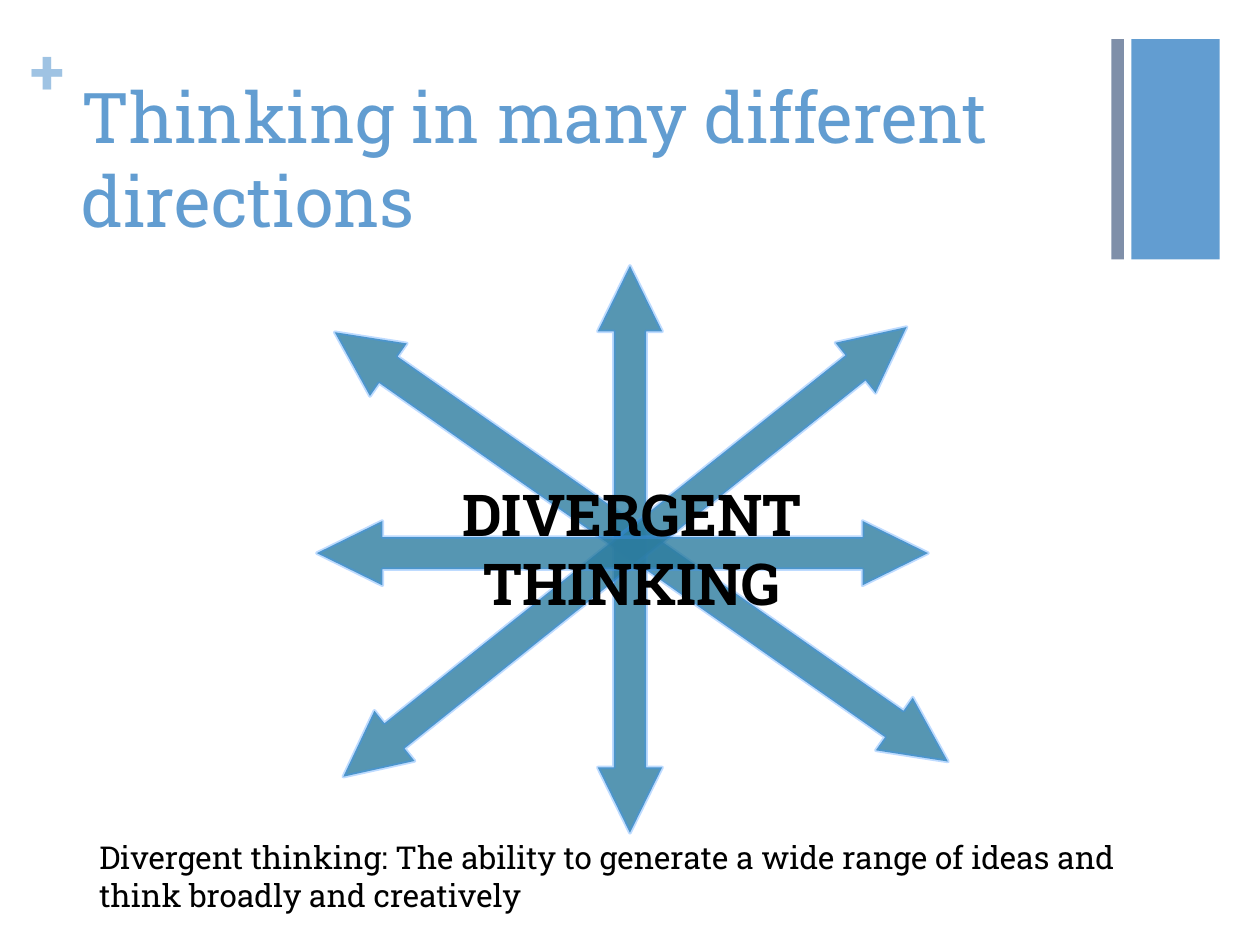
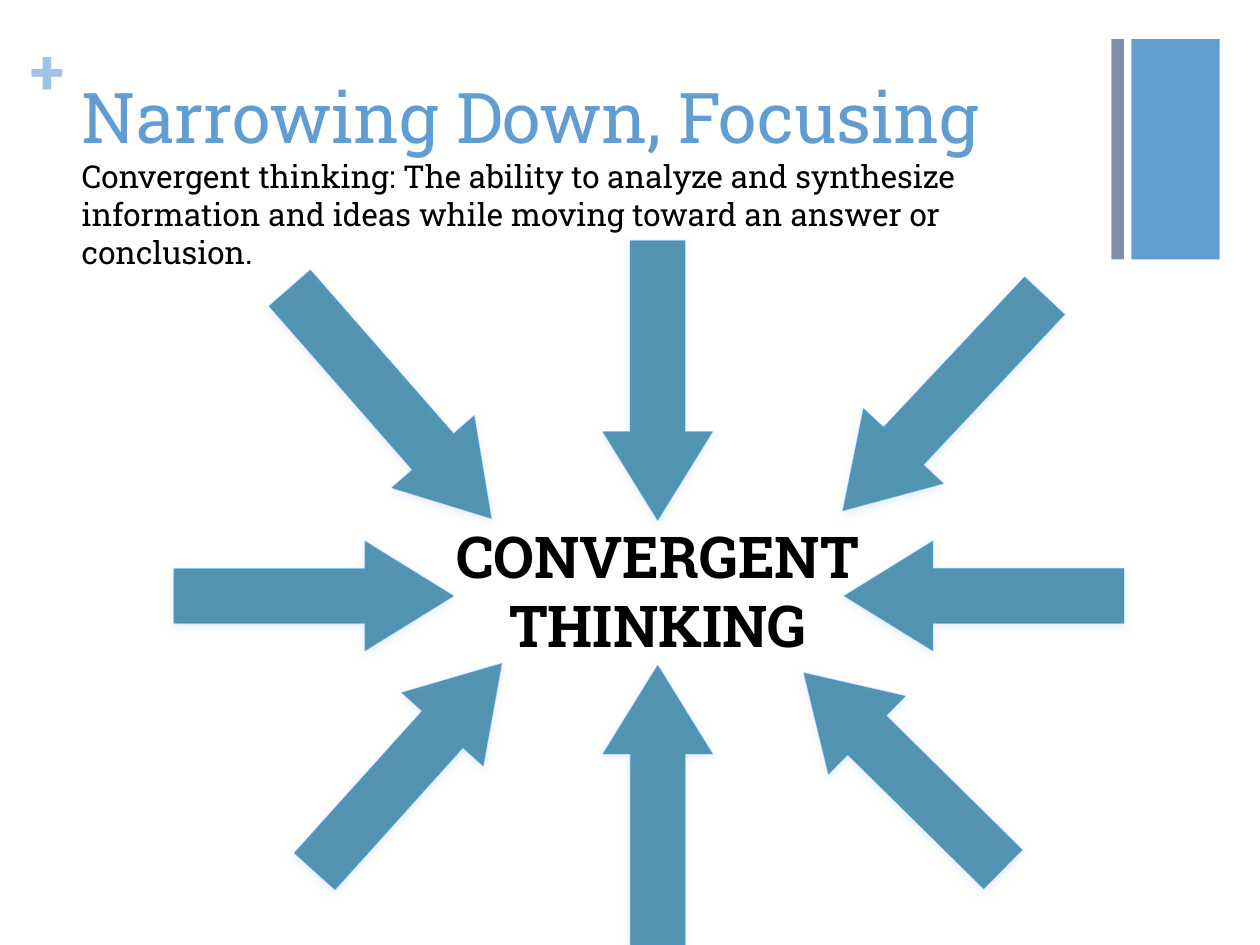
import pptx
import pptx.util
import pptx.dml.color
import pptx.enum.shapes
import pptx.enum.text
import lxml.etree

Inches = pptx.util.Inches
Pt = pptx.util.Pt
Shape = pptx.enum.shapes.MSO_SHAPE
Align = pptx.enum.text.PP_ALIGN
Anchor = pptx.enum.text.MSO_ANCHOR

FONT = "Roboto Slab"
BLUE, SLATE, PALE = "629DD1", "7F8FA9", "9FC3E3"
TEAL, EDGE, GLOW, BLACK = "2C7C9F", "3A93FF", "ACCBF9", "000000"
TITLE_BOX = (0.55, 0.53, 8.26, 1.22)
BAND_BOX = (8.82, 0.31, 0.86, 1.75)

# Each ray: centre offset from the hub (x, y), length, angle
SPREAD = [
    (0.09, -0.02, 5.94, 215),
    (0, 0, 4.5, 270),
    (-0.04, 0.02, 5.72, 141.4),
    (-0.06, 0.03, 4.85, 0),
]
FOCUS = [
    (-2.12, -1.53, 2.43, 228.8),
    (-2.73, 0, 2.22, 180),
    (2.59, 0, 2.22, 0),
    (0, -1.71, 2.22, 270),
    (2.27, -1.53, 2.34, 313.2),
    (-1.98, 1.36, 2.22, 132),
    (0, 1.66, 2.22, 90),
    (1.95, 1.39, 2.22, 44.6),
]


def color(code):
    return pptx.dml.color.RGBColor.from_string(code)


def place(box):
    return [Inches(round(v, 3)) for v in box]


def fade(fill, percent):
    """Make a solid fill partly see-through."""
    tint = fill._xPr.find(".//" + pptx.oxml.ns.qn("a:srgbClr"))
    alpha = lxml.etree.SubElement(tint, pptx.oxml.ns.qn("a:alpha"))
    alpha.set("val", str(percent * 1000))


def glow(shape):
    """Add a soft shadow straight below the shape."""
    qn = pptx.oxml.ns.qn
    effects = shape._element.spPr.find(qn("a:effectLst"))
    outer = lxml.etree.SubElement(effects, qn("a:outerShdw"))
    for key, val in (("blurRad", Pt(5)), ("dist", Pt(1.8)), ("dir", 5400000), ("rotWithShape", 0)):
        outer.set(key, str(int(val)))
    tint = lxml.etree.SubElement(outer, qn("a:srgbClr"), val=GLOW)
    lxml.etree.SubElement(tint, qn("a:alpha"), val="34000")


def add_solid(slide, kind, box, code):
    shape = slide.shapes.add_shape(kind, *place(box))
    shape.shadow.inherit = False
    shape.fill.solid()
    shape.fill.fore_color.rgb = color(code)
    shape.line.fill.background()
    return shape


def write(frame, lines, size, code, bold=False, align=Align.LEFT,
          anchor=Anchor.TOP, inset=(0.1, 0.05)):
    frame.word_wrap = True
    frame.auto_size = pptx.enum.text.MSO_AUTO_SIZE.NONE
    frame.vertical_anchor = anchor
    frame.margin_left = frame.margin_right = Inches(inset[0])
    frame.margin_top = frame.margin_bottom = Inches(inset[1])
    for i, line in enumerate(lines):
        para = frame.paragraphs[0] if i == 0 else frame.add_paragraph()
        para.alignment = align
        run = para.add_run()
        run.text = line
        run.font.name = FONT
        run.font.size = Pt(size)
        run.font.bold = bold
        run.font.color.rgb = color(code)


def add_text(slide, box, lines, size, code=BLACK, **style):
    frame = slide.shapes.add_textbox(*place(box)).text_frame
    write(frame, lines, size, code, **style)


def add_band(slide, box):
    left, top, width, height = box
    add_solid(slide, Shape.RECTANGLE, (left + 0.16, top, width - 0.16, height), BLUE)
    add_solid(slide, Shape.RECTANGLE, (left, top, 0.1, height), SLATE)


def add_title(slide, box, text):
    title = slide.shapes.title
    title.left, title.top, title.width, title.height = place(box)
    write(title.text_frame, [text], 40, BLUE)


def add_rays(slide, hub, rays, kind, thick, head, edge, shaded=False):
    """Draw arrows around the hub point."""
    for dx, dy, length, angle in rays:
        box = (hub[0] + dx - length / 2, hub[1] + dy - thick / 2, length, thick)
        ray = add_solid(slide, kind, box, TEAL)
        ray.rotation = angle
        ray.adjustments[0] = 0.5
        ray.adjustments[1] = head
        fade(ray.fill, 80)
        ray.line.color.rgb = color(EDGE)
        ray.line.width = Pt(edge)
        fade(ray.line.fill, 33)
        if shaded:
            glow(ray)


def add_label(slide, box, lines):
    add_text(slide, box, lines, 33, bold=True, align=Align.CENTER, anchor=Anchor.BOTTOM)


def start(deck, title):
    """Add a slide with the shared band, plus sign and title."""
    slide = deck.slides.add_slide(deck.slide_layouts[5])
    add_band(slide, BAND_BOX)
    add_text(slide, (0.24, 0.25, 0.29, 0.61), ["+"], 36, PALE, bold=True, inset=(0, 0))
    add_title(slide, TITLE_BOX, title)
    return slide


def spread_slide(deck):
    slide = start(deck, "Thinking in many different directions")
    add_rays(slide, (5, 4.36), SPREAD, Shape.LEFT_RIGHT_ARROW, 0.51, 1.018, 2)
    add_label(slide, (2.62, 3.45, 4.79, 1.5), ["DIVERGENT", "THINKING"])
    add_text(slide, (0.69, 6.6, 8.39, 0.71), [
        "Divergent thinking: The ability to generate a wide range of ideas "
        "and think broadly and creatively"], 18)


def focus_slide(deck):
    slide = start(deck, "Narrowing Down, Focusing")
    add_rays(slide, (5.22, 4.73), FOCUS, Shape.LEFT_ARROW, 0.87, 0.809, 0.75, shaded=True)
    add_label(slide, (3.26, 3.9, 3.92, 1.38), ["CONVERGENT", "THINKING"])
    add_text(slide, (0.55, 1.2, 8.26, 0.71), [
        "Convergent thinking: The ability to analyze and synthesize information "
        "and ideas while moving toward an answer or conclusion."], 18)


def main():
    deck = pptx.Presentation()
    deck.slide_width, deck.slide_height = Inches(10), Inches(7.5)
    spread_slide(deck)
    focus_slide(deck)
    deck.save("out.pptx")


if __name__ == "__main__":
    main()
